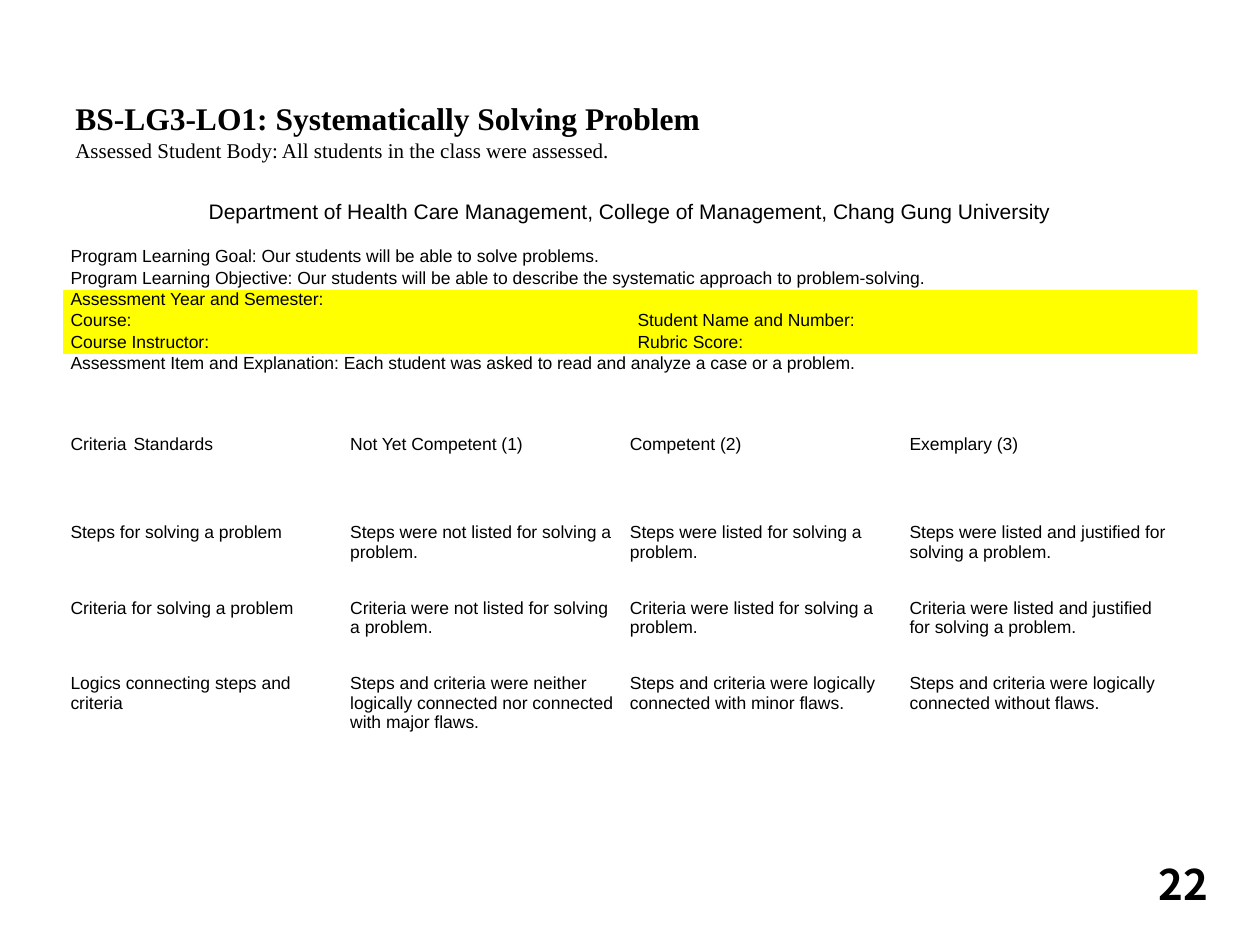
from pptx import Presentation
from pptx.dml.color import RGBColor
from pptx.enum.text import MSO_ANCHOR, PP_ALIGN
from pptx.util import Emu, Pt

PX = 9144  # 100 px to the inch
BLACK = RGBColor(0x00, 0x00, 0x00)
YELLOW = RGBColor(0xFF, 0xFF, 0x00)
PLAIN_TABLE = "{2D5ABB26-0587-4C30-8999-92F81FD0307C}"


def px(n):
    return Emu(n * PX)


class SlideBuilder:
    body_font, body_size = "Arial", 10

    def __init__(self, prs):
        self.s = prs.slides.add_slide(prs.slide_layouts[6])

    def style(self, p, font, size, bold=False, align=PP_ALIGN.LEFT):
        p.alignment = align
        f = p.font
        f.name, f.size, f.bold = font, Pt(size), bold
        f.color.rgb = BLACK

    def text(self, x, y, w, h, lines, font, anchor=MSO_ANCHOR.TOP, align=PP_ALIGN.LEFT):
        """Each line is (text, size, bold)."""
        tf = self.s.shapes.add_textbox(px(x), px(y), px(w), px(h)).text_frame
        tf.word_wrap = True
        tf.vertical_anchor = anchor
        for i, (line, size, bold) in enumerate(lines):
            p = tf.add_paragraph() if i else tf.paragraphs[0]
            p.text = line
            self.style(p, font, size, bold, align)

    def table(self, x, y, col_width, heights, rows):
        """A row with a single entry spans all columns."""
        n = max(len(row) for row in rows)
        frame = self.s.shapes.add_table(len(rows), n, px(x), px(y),
                                        px(col_width * n), px(sum(heights)))
        tbl = frame.table
        tbl.first_row = tbl.horz_banding = False
        tbl._tbl.tblPr.find("{*}tableStyleId").text = PLAIN_TABLE
        for col in tbl.columns:
            col.width = px(col_width)
        for r, (row, height) in enumerate(zip(rows, heights)):
            tbl.rows[r].height = px(height)
            if len(row) == 1:
                tbl.cell(r, 0).merge(tbl.cell(r, n - 1))
            for c in range(n):
                self.cell(tbl.cell(r, c), row[c] if c < len(row) else "")
        return tbl

    def cell(self, cell, text):
        cell.margin_left = cell.margin_right = px(6)
        cell.margin_top = cell.margin_bottom = 0
        cell.fill.background()
        p = cell.text_frame.paragraphs[0]
        if text:
            p.text = text
        else:  # keeps an empty row from growing
            p._p.get_or_add_endParaRPr().set("sz", str(self.body_size * 100))
        self.style(p, self.body_font, self.body_size)

    def highlight(self, tbl, rows):
        for r in rows:
            for cell in tbl.rows[r].cells:
                cell.fill.solid()
                cell.fill.fore_color.rgb = YELLOW


COURSE_INFO = [
    ["Department of Health Care Management, College of Management, Chang Gung University"],
    [""],
    ["Program Learning Goal: Our students will be able to solve problems."],
    ["Program Learning Objective: Our students will be able to describe the "
     "systematic approach to problem-solving."],
    ["Assessment Year and Semester:", ""],
    ["Course:", "Student Name and Number:"],
    ["Course Instructor:", "Rubric Score:"],
    ["Assessment Item and Explanation: Each student was asked to read and "
     "analyze a case or a problem."],
]

RUBRIC = [
    ["Criteria\tStandards", "Not Yet Competent (1)", "Competent (2)", "Exemplary (3)"],
    ["Steps for solving a problem",
     "Steps were not listed for solving a problem.",
     "Steps were listed for solving a problem.",
     "Steps were listed and justified for solving a problem."],
    ["Criteria for solving a problem",
     "Criteria were not listed for solving a problem.",
     "Criteria were listed for solving a problem.",
     "Criteria were listed and justified for solving a problem."],
    ["Logics connecting steps and criteria",
     "Steps and criteria were neither logically connected nor connected with major flaws.",
     "Steps and criteria were logically connected with minor flaws.",
     "Steps and criteria were logically connected without flaws."],
]


def main():
    prs = Presentation()
    prs.slide_width, prs.slide_height = px(1000), px(750)
    b = SlideBuilder(prs)

    # Slide number
    b.text(736, 674, 233, 52, [("22", 24, True)], "Noto Sans CJK TC",
           MSO_ANCHOR.BOTTOM, PP_ALIGN.RIGHT)

    # Course information
    info = b.table(50, 159, 450, [20] + [17] * 7, COURSE_INFO)
    b.style(info.cell(0, 0).text_frame.paragraphs[0], b.body_font, 12,
            align=PP_ALIGN.CENTER)
    b.highlight(info, range(4, 7))

    # Scoring rubric
    b.table(50, 345, 222, [70, 60, 60, 90], RUBRIC)

    # Heading
    b.text(50, 74, 900, 58, [
        ("BS-LG3-LO1: Systematically Solving Problem", 18, True),
        ("Assessed Student Body: All students in the class were assessed.", 12, False),
    ], "Times New Roman")

    prs.save("out.pptx")


if __name__ == "__main__":
    main()
